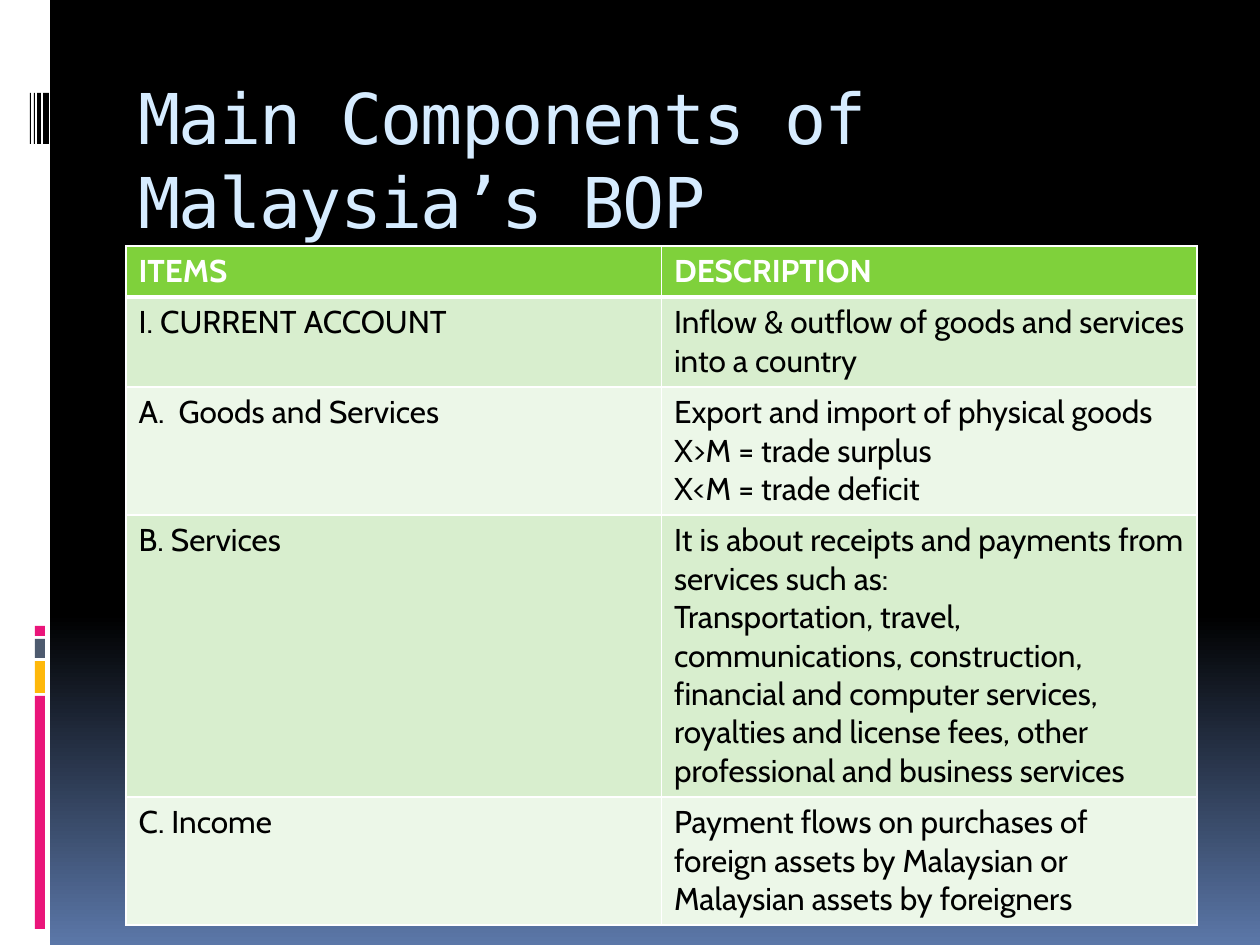
from copy import deepcopy

from lxml import etree
from pptx import Presentation
from pptx.dml.color import RGBColor
from pptx.enum.shapes import MSO_SHAPE
from pptx.enum.text import MSO_ANCHOR
from pptx.oxml.ns import qn
from pptx.util import Emu, Pt

RECT = MSO_SHAPE.RECTANGLE
TOP = MSO_ANCHOR.TOP
PX_PER_INCH = 126
BODY_FONT, TITLE_FONT = "Cabin", "DejaVu Sans Mono"
WHITE, BLACK, PINK, AMBER, SLATE = "FFFFFF", "000000", "EA157A", "FEB80A", "4E5B6F"
GREEN, BANDS = "7FD13B", ("D8EECE", "ECF7E8")
ROWS = [
    (["ITEMS"], ["DESCRIPTION"]),
    (["I. CURRENT ACCOUNT"], ["Inflow & outflow of goods and services into a country"]),
    (["A.  Goods and Services"],
     ["Export and import of physical goods", "X>M = trade surplus", "X<M = trade deficit"]),
    (["B. Services"],
     ["It is about receipts and payments from services such as:",
      "Transportation, travel, communications, construction, financial and computer "
      "services, royalties and license fees, other professional and business services"]),
    (["C. Income"],
     ["Payment flows on purchases of foreign assets by Malaysian or "
      "Malaysian assets by foreigners"]),
]
ROW_HEIGHTS = [51, 90, 128, 282, 128]


def px(n):
    """Turn pixels into EMU."""
    return Emu(round(n * 914400 / PX_PER_INCH))


def rgb(color):
    """Turn a hex string into a colour."""
    return RGBColor.from_string(color)


def write(tf, paragraphs, font=BODY_FONT, size=18, color=BLACK, bold=False, tracking=None):
    """Fill a text frame with formatted paragraphs."""
    tf.word_wrap = True
    for i, text in enumerate(paragraphs):
        p = tf.add_paragraph() if i else tf.paragraphs[0]
        r = p.add_run()
        r.text = text
        r.font.name, r.font.size, r.font.bold = font, Pt(size), bold
        r.font.color.rgb = rgb(color)
        if tracking:
            r.font._element.set("spc", str(tracking))


def add_rect(s, x, y, w, h, color):
    """Add a plain filled rectangle."""
    sp = s.shapes.add_shape(RECT, px(x), px(y), px(w), px(h))
    sp.shadow.inherit = False
    sp.fill.solid()
    sp.fill.fore_color.rgb = rgb(color)
    sp.line.fill.background()


def add_background(s, stops):
    """Paint a top-to-bottom gradient from (position, colour) stops."""
    fill = s.background.fill
    fill.gradient()
    fill.gradient_angle = 270
    gs_list = next(s.element.iter(qn("a:gsLst")))
    while len(gs_list) < len(stops):
        gs_list.append(deepcopy(gs_list[-1]))
    for stop, (position, color) in zip(fill.gradient_stops, stops):
        stop.position = position
        stop.color.rgb = rgb(color)


def add_side_strip(s, x, y, w, h):
    """Add the white strip with its barcode and coloured bars."""
    add_rect(s, x, y, w, h, WHITE)
    for dx, bar_w in ((43, 6), (37, 4), (34, 1), (30, 1)):
        add_rect(s, x + dx, y + 93, bar_w, 51, BLACK)
    for dy, bar_h, color in ((696, 233, PINK), (661, 32, AMBER),
                             (639, 19, SLATE), (626, 10, PINK)):
        add_rect(s, x + 35, y + dy, 10, bar_h, color)


def add_title(s, x, y, w, h, text):
    """Add the slide title."""
    tf = s.shapes.add_textbox(px(x), px(y), px(w), px(h)).text_frame
    tf.vertical_anchor = TOP
    tf.margin_top = px(4)
    write(tf, [text], font=TITLE_FONT, size=40, color="D6ECFF", tracking=-100)


def add_borders(cell, top, bottom):
    """Draw white cell borders, with the given top and bottom widths in points."""
    tc_pr = cell._tc.get_or_add_tcPr()
    for side, width in (("L", 1), ("R", 1), ("T", top), ("B", bottom)):
        ln = etree.SubElement(tc_pr, qn(f"a:ln{side}"), w=str(Pt(width)))
        fill = etree.SubElement(ln, qn("a:solidFill"))
        etree.SubElement(fill, qn("a:srgbClr"), val=WHITE)


def add_items_table(s, x, y, w, row_heights, rows):
    """Add the banded table of items and descriptions."""
    frame = s.shapes.add_table(len(rows), len(rows[0]), px(x), px(y), px(w),
                               px(sum(row_heights)))
    table = frame.table
    for i, (row, height) in enumerate(zip(rows, row_heights)):
        table.rows[i].height = px(height)
        header = i == 0
        for j, paragraphs in enumerate(row):
            cell = table.cell(i, j)
            add_borders(cell, top=3 if i == 1 else 1, bottom=3 if header else 1)
            cell.fill.solid()
            cell.fill.fore_color.rgb = rgb(GREEN if header else BANDS[(i - 1) % 2])
            write(cell.text_frame, paragraphs, color=WHITE if header else BLACK, bold=header)


def main():
    """Build and save the slide."""
    prs = Presentation()
    prs.slide_width, prs.slide_height = px(1260), px(945)
    s = prs.slides.add_slide(prs.slide_layouts[6])
    add_background(s, [(0, BLACK), (0.65, BLACK), (1, "5B77A8")])
    add_side_strip(s, 0, 0, 50, 945)
    add_title(s, 126, 71, 1071, 126, "Main Components of Malaysia’s BOP")
    add_items_table(s, 126, 246, 1071, ROW_HEIGHTS, ROWS)
    prs.save("out.pptx")


if __name__ == "__main__":
    main()
